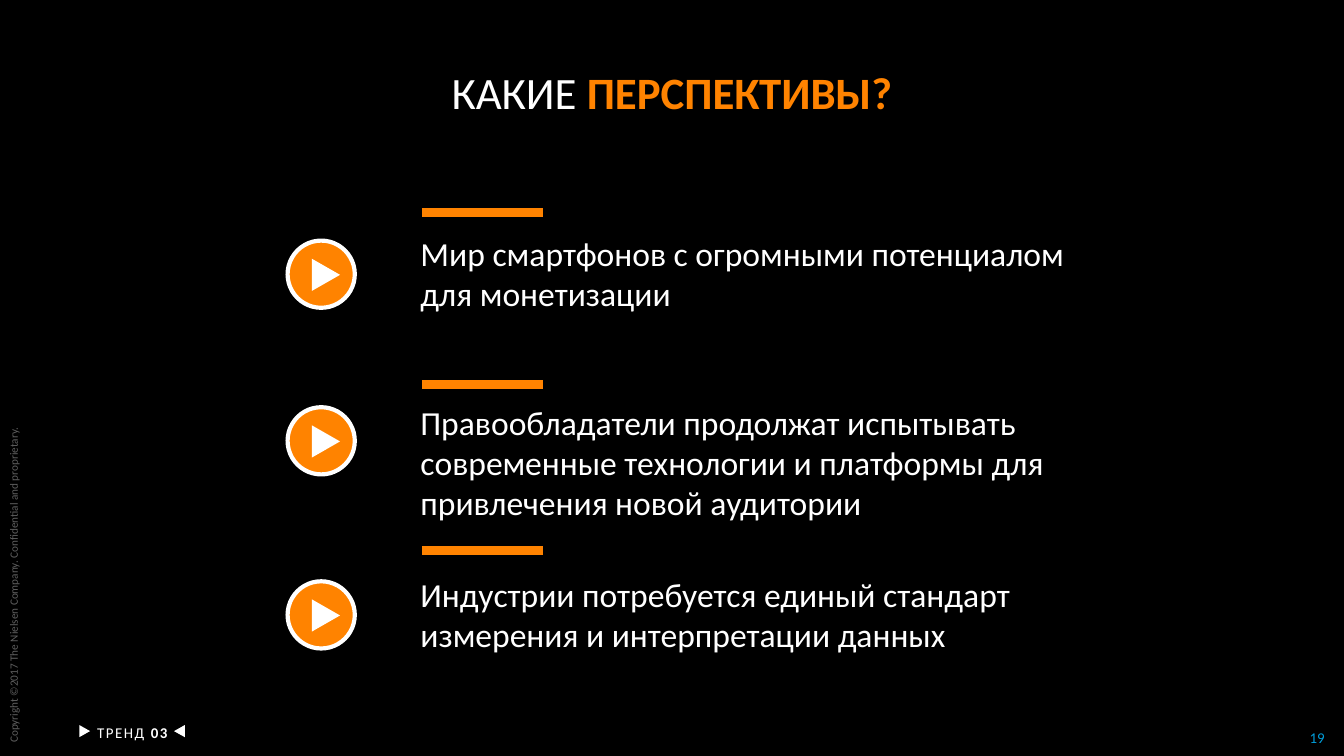
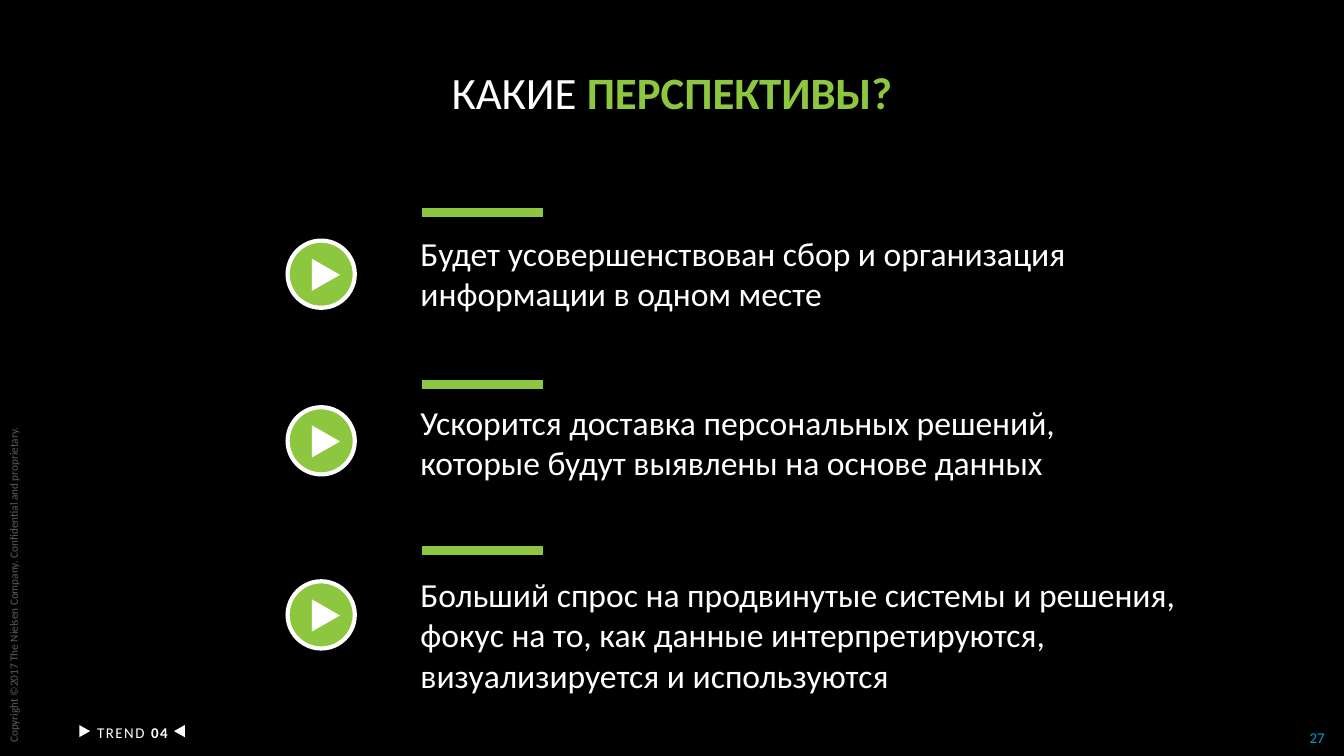
from dataclasses import dataclass

import lxml.etree
import pptx
import pptx.dml.color
import pptx.enum.shapes
import pptx.enum.text
import pptx.oxml.ns
import pptx.util

PX = 4572
FONT = "Calibri"
BLACK, WHITE, GREY, BLUE = "000000", "FFFFFF", "5F5F5F", "009DD9"
ORANGE, GREEN = "FF8300", "8DC63F"
SHAPE = pptx.enum.shapes.MSO_SHAPE
ALIGN = pptx.enum.text.PP_ALIGN
ANCHOR = pptx.enum.text.MSO_ANCHOR
COPYRIGHT = "Copyright ©2017 The Nielsen Company. Confidential and proprietary."


@dataclass(frozen=True)
class Row:
    rule_y: int
    button_y: int
    text_y: int


@dataclass(frozen=True)
class Point:
    text: str
    width: int
    lines: int


@dataclass(frozen=True)
class Outlook:
    trend: str
    number: str
    page: str
    accent: str
    points: tuple[Point, ...]


ROWS = (Row(316, 358, 337), Row(572, 606, 588), Row(819, 865, 844))

OUTLOOKS = (
    Outlook("ТРЕНД", "03", "19", ORANGE, (
        Point("Мир смартфонов с огромными потенциалом для монетизации", 1004, 2),
        Point("Правообладатели продолжат испытывать современные технологии "
              "и платформы для привлечения новой аудитории", 1072, 3),
        Point("Индустрии потребуется единый стандарт измерения "
              "и интерпретации данных", 1102, 2),
    )),
    Outlook("TREND", "04", "27", GREEN, (
        Point("Будет усовершенствован сбор и организация информации "
              "в одном месте", 1182, 2),
        Point("Ускорится доставка персональных решений, "
              "которые будут выявлены на основе данных", 1172, 2),
        Point("Больший спрос на продвинутые системы и решения, "
              "фокус на то, как данные интерпретируются, "
              "визуализируется и используются", 1182, 3),
    )),
)


def px(n: int) -> pptx.util.Emu:
    return pptx.util.Emu(n * PX)


def rgb(color: str) -> pptx.dml.color.RGBColor:
    return pptx.dml.color.RGBColor.from_string(color)


def add_text(slide, x: int, y: int, w: int, h: int, text: str, *, size: int,
             color: str = WHITE, bold_text: str = "", bold_color: str = WHITE,
             align=ALIGN.LEFT, anchor=ANCHOR.TOP, inset: bool = True,
             wrap: bool = True, grow: bool = True, rotation: int = 0,
             spacing: int = 0, line_spacing: float = 1.0) -> None:
    sp = slide.shapes.add_textbox(px(x), px(y), px(w), px(h))
    sp.rotation = rotation
    tf = sp.text_frame
    tf.word_wrap = wrap
    tf.vertical_anchor = anchor
    if grow:
        tf.auto_size = pptx.enum.text.MSO_AUTO_SIZE.SHAPE_TO_FIT_TEXT
    if not inset:
        tf.margin_left = tf.margin_right = tf.margin_top = tf.margin_bottom = 0
    p = tf.paragraphs[0]
    p.alignment = align
    p.line_spacing = line_spacing
    runs = [(text, color, False)]
    if bold_text:
        runs.append((bold_text, bold_color, True))
    for content, run_color, bold in runs:
        r = p.add_run()
        r.text = content
        r.font.name = FONT
        r.font.size = pptx.util.Pt(size)
        r.font.bold = bold
        r.font.color.rgb = rgb(run_color)
        if spacing:
            r._r.get_or_add_rPr().set("spc", str(spacing))


def add_shape(slide, kind, x: int, y: int, w: int, h: int, fill: str,
              line: str = "", rotation: int = 0) -> None:
    sp = slide.shapes.add_shape(kind, px(x), px(y), px(w), px(h))
    sp.shadow.inherit = False
    sp.rotation = rotation
    sp.fill.solid()
    sp.fill.fore_color.rgb = rgb(fill)
    if line:
        sp.line.color.rgb = rgb(line)
        sp.line.width = pptx.util.Pt(2.25)
    else:
        sp.line.fill.background()


def add_rule(slide, x: int, y: int, w: int, color: str) -> None:
    line = slide.shapes.add_connector(
        pptx.enum.shapes.MSO_CONNECTOR.STRAIGHT, px(x), px(y), px(x + w), px(y))
    line.line.color.rgb = rgb(color)
    line.line.width = pptx.util.Pt(4.5)
    lxml.etree.SubElement(line._element.spPr, pptx.oxml.ns.qn("a:effectLst"))


def add_frame(slide, outlook: Outlook) -> None:
    slide.background.fill.solid()
    slide.background.fill.fore_color.rgb = rgb(BLACK)
    add_text(slide, 1938, 1085, 44, 26, outlook.page, size=8, color=BLUE,
             align=ALIGN.CENTER, anchor=ANCHOR.MIDDLE, inset=False, wrap=False)
    add_text(slide, -241, 844, 522, 40, COPYRIGHT, size=6, color=GREY,
             anchor=ANCHOR.MIDDLE, grow=False, rotation=270)
    add_text(slide, 0, 106, 2000, 72, "КАКИЕ ", size=24,
             bold_text="ПЕРСПЕКТИВЫ?", bold_color=outlook.accent,
             align=ALIGN.CENTER, inset=False, line_spacing=0.9)
    add_text(slide, 118, 1067, 158, 48, outlook.trend + " ", size=8,
             bold_text=outlook.number, align=ALIGN.CENTER, spacing=80)
    for x, rotation in ((117, 90), (258, 270)):
        add_shape(slide, SHAPE.ISOSCELES_TRIANGLE, x, 1080, 18, 16, WHITE,
                  rotation=rotation)


def add_point(slide, row: Row, point: Point, accent: str) -> None:
    add_text(slide, 606, row.text_y, point.width, 22 + 60 * point.lines,
             point.text, size=18)
    add_shape(slide, SHAPE.OVAL, 428, row.button_y, 100, 100, accent,
              line=WHITE, rotation=270)
    add_shape(slide, SHAPE.ISOSCELES_TRIANGLE, 461, row.button_y + 30, 48, 42,
              WHITE, rotation=90)
    add_rule(slide, 628, row.rule_y, 180, accent)


def main() -> None:
    prs = pptx.Presentation()
    prs.slide_width, prs.slide_height = px(2000), px(1125)
    for outlook in OUTLOOKS:
        slide = prs.slides.add_slide(prs.slide_layouts[6])
        add_frame(slide, outlook)
        for row, point in zip(ROWS, outlook.points):
            add_point(slide, row, point, outlook.accent)
    prs.save("out.pptx")


if __name__ == "__main__":
    main()
